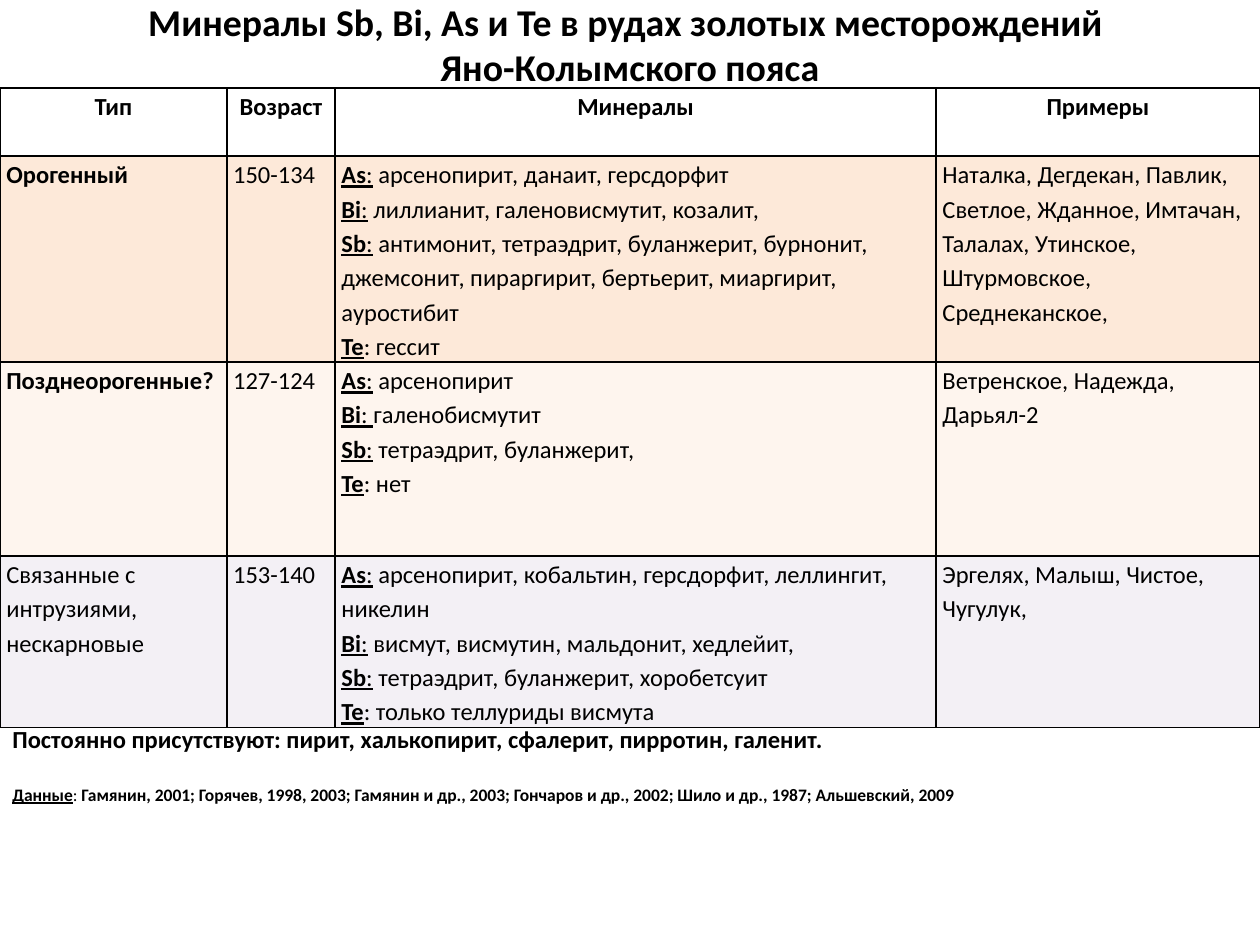
import pptx
import pptx.util
import pptx.dml.color
import pptx.enum.text
import pptx.oxml
import pptx.oxml.ns
from dataclasses import dataclass

Inch = pptx.util.Inches
Pt = pptx.util.Pt
RGB = pptx.dml.color.RGBColor
Align = pptx.enum.text.PP_ALIGN
Fit = pptx.enum.text.MSO_AUTO_SIZE
Anchor = pptx.enum.text.MSO_ANCHOR


@dataclass(frozen=True)
class Theme:
    font: str = "Calibri"
    ink: str = "000000"
    head: float = 21.6
    body: float = 14
    note: float = 10
    lead: float = 1.15
    rule: float = 1
    tints: tuple = (None, ("FCD5B5", 51), ("FDEADA", 46), ("E6E0EC", 48))


class Page:
    def __init__(self, deck, theme):
        self.theme = theme
        self.wide, self.high = deck.slide_width, deck.slide_height
        self.slide = deck.slides.add_slide(deck.slide_layouts[5])

    def box(self, x, y, w, h):
        return (round(x * self.wide), round(y * self.high),
                round(w * self.wide), round(h * self.high))

    def style(self, para, runs, size, bold=None, align=Align.LEFT):
        para.alignment = align
        font = para.font
        font.name, font.size, font.bold = self.theme.font, Pt(size), bold
        font.color.rgb = RGB.from_string(self.theme.ink)
        for text, strong, under in runs:
            run = para.add_run()
            run.text = text
            if strong is not None:
                run.font.bold = strong
            if under:
                run.font.underline = True

    def title(self, lines, *area):
        shape = self.slide.shapes.title
        shape.left, shape.top, shape.width, shape.height = self.box(*area)
        frame = shape.text_frame
        frame.word_wrap, frame.auto_size = True, Fit.NONE
        frame.vertical_anchor = Anchor.MIDDLE
        para = frame.paragraphs[0]
        for i, line in enumerate(lines):
            if i:
                para.add_line_break()
            self.style(para, [(line, None, False)], self.theme.head, True, Align.CENTER)

    def label(self, runs, size, bold, *area):
        frame = self.slide.shapes.add_textbox(*self.box(*area)).text_frame
        frame.word_wrap, frame.auto_size = True, Fit.SHAPE_TO_FIT_TEXT
        self.style(frame.paragraphs[0], runs, size, bold)

    def edge(self, cell):
        props = cell._tc.get_or_add_tcPr()
        space = pptx.oxml.ns.nsdecls("a")
        for i, side in enumerate("LRTB"):
            props.insert(i, pptx.oxml.parse_xml(
                f'<a:ln{side} {space} w="{Pt(self.theme.rule)}"><a:solidFill>'
                f'<a:srgbClr val="{self.theme.ink}"/></a:solidFill></a:ln{side}>'))

    def tint(self, cell, tone):
        if tone is None:
            cell.fill.background()
            return
        color, share = tone
        cell.fill.solid()
        cell.fill.fore_color.rgb = RGB.from_string(color)
        mark = cell._tc.tcPr.find(".//" + pptx.oxml.ns.qn("a:srgbClr"))
        mark.append(pptx.oxml.parse_xml(
            f'<a:alpha {pptx.oxml.ns.nsdecls("a")} val="{share * 1000}"/>'))

    def fill(self, cell, text, bold, align):
        cell.margin_left = cell.margin_right = Inch(0.05)
        cell.margin_top = cell.margin_bottom = 0
        frame = cell.text_frame
        for i, line in enumerate(text.split("\n")):
            para = frame.add_paragraph() if i else frame.paragraphs[0]
            para.line_spacing = self.theme.lead
            runs = [(line, None, False)]
            if "|" in line:
                sign, colon, names = line.split("|")
                runs = [(sign, True, True), (colon, None, True), (names, None, False)]
            self.style(para, [r for r in runs if r[0]], self.theme.body, bold, align)

    def table(self, data, cols, rows, *area):
        grid = self.slide.shapes.add_table(len(rows), len(cols), *self.box(*area)).table
        grid.first_row = grid.horz_banding = False
        for col, size in zip(grid.columns, cols):
            col.width = Inch(size)
        for r, (row, size) in enumerate(zip(grid.rows, rows)):
            row.height = Inch(size)
            for c, cell in enumerate(row.cells):
                bold = r == 0 or (c == 0 and r < 3)
                self.fill(cell, data[r][c], bold, Align.LEFT if r else Align.CENTER)
                self.tint(cell, self.theme.tints[r])
                self.edge(cell)


DATA = [
    ("Тип", "Возраст", "Минералы", "Примеры"),
    ("Орогенный", "150-134",
     "As|:| арсенопирит, данаит, герсдорфит\n"
     "Bi|:| лиллианит, галеновисмутит, козалит,\n"
     "Sb|:| антимонит, тетраэдрит, буланжерит, бурнонит, джемсонит, "
     "пираргирит, бертьерит, миаргирит, ауростибит\n"
     "Te||: гессит",
     "Наталка, Дегдекан, Павлик, Светлое, Жданное, Имтачан, Талалах, "
     "Утинское, Штурмовское, Среднеканское,"),
    ("Позднеорогенные?", "127-124",
     "As|:| арсенопирит\n"
     "Bi|: |галенобисмутит\n"
     "Sb|:| тетраэдрит, буланжерит,\n"
     "Te||: нет",
     "Ветренское, Надежда, Дарьял-2"),
    ("Связанные с интрузиями, нескарновые", "153-140",
     "As|:| арсенопирит, кобальтин, герсдорфит, леллингит, никелин\n"
     "Bi|:| висмут, висмутин, мальдонит, хедлейит,\n"
     "Sb|:| тетраэдрит, буланжерит, хоробетсуит\n"
     "Te||: только теллуриды висмута",
     "Эргелях, Малыш, Чистое, Чугулук,"),
]


def main():
    deck = pptx.Presentation()
    deck.slide_width, deck.slide_height = Inch(10), Inch(7.5)
    theme = Theme()
    page = Page(deck, theme)
    page.title(["Минералы Sb, Bi, As и Te в рудах золотых месторождений ",
                "Яно-Колымского пояса"], 0, 0, 1, 0.7 / 7.5)
    page.table(DATA, (1.8, 0.86, 4.77, 2.57), (0.54, 1.53, 1.54, 1.24),
               0, 0.7 / 7.5, 1, 4.85 / 7.5)
    page.label([("Постоянно присутствуют: пирит, халькопирит, сфалерит, "
                 "пирротин, галенит.", None, False)],
               theme.body, True, 0, 0.76, 1, 0.34 / 7.5)
    page.label([("Данные", True, True), (": ", None, False),
                ("Гамянин, 2001; Горячев, 1998, 2003; Гамянин и др., 2003; "
                 "Гончаров и др., 2002; Шило и др., 1987; Альшевский, 2009",
                 True, False)],
               theme.note, False, 0, 6.17 / 7.5, 1, 0.27 / 7.5)
    deck.save("out.pptx")


if __name__ == "__main__":
    main()
